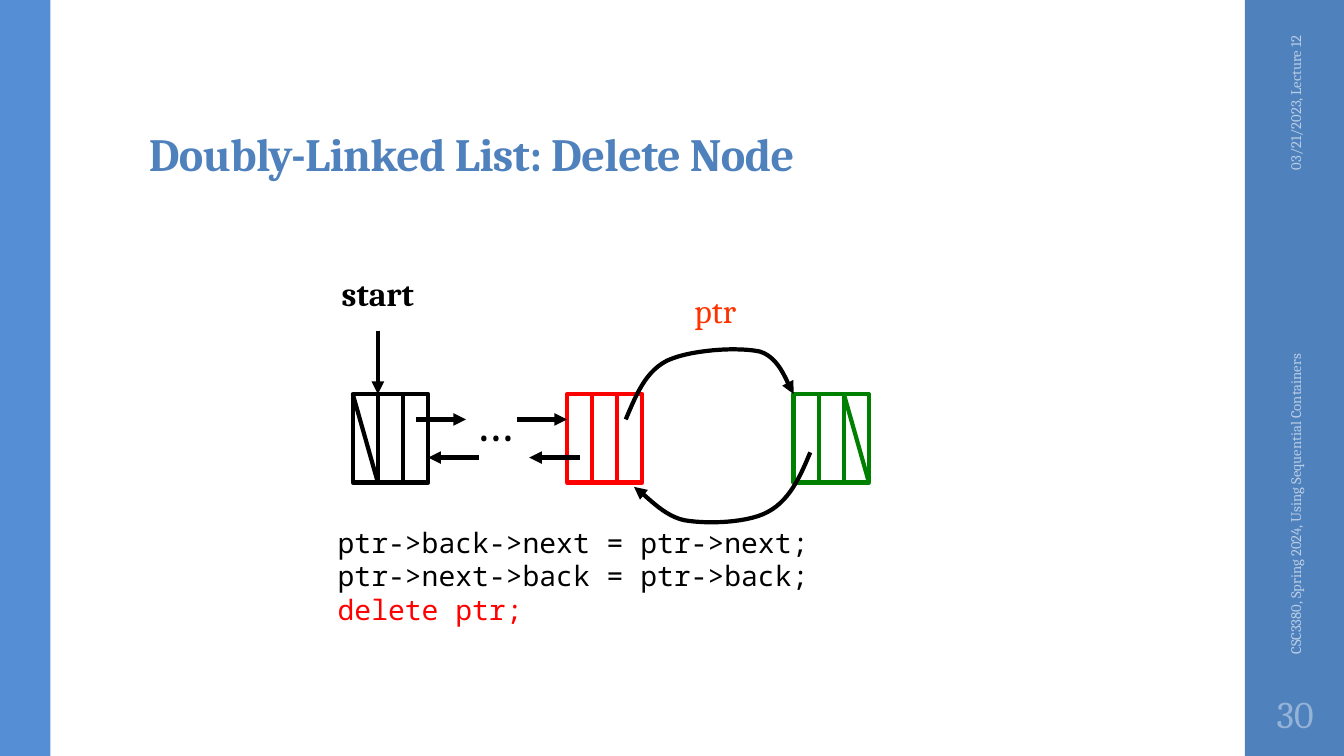
from lxml.etree import SubElement
from pptx import Presentation
from pptx.dml.color import RGBColor
from pptx.enum.shapes import MSO_CONNECTOR as Link, MSO_SHAPE as Shape
from pptx.enum.text import MSO_ANCHOR as Anchor, PP_ALIGN as Align
from pptx.oxml.ns import qn
from pptx.util import Cm, Pt

BLUE = RGBColor(0x4F, 0x81, 0xBD)
LIGHT_BLUE = RGBColor(0x55, 0x8E, 0xD5)
FOOTER_BLUE = RGBColor(0xB9, 0xCD, 0xE5)
NUMBER_BLUE = RGBColor(0x95, 0xB3, 0xD7)
BLACK = RGBColor(0, 0, 0)
WHITE = RGBColor(0xFF, 0xFF, 0xFF)
RED = RGBColor(0xFF, 0, 0)
ORANGE = RGBColor(0xFF, 0x33, 0)
GREEN = RGBColor(0, 0x80, 0)

SERIF, MONO = "Cambria", "Noto Sans Mono"
NODE_WIDTH, NODE_HEIGHT = 1.9, 2.23
CELL = NODE_WIDTH / 3
ARROW_LENGTH = 1.27
NEXT_Y, BACK_Y = 0.64, 1.6
CURVE_STEPS = 14

NEXT_CURVE = [(6.88, 0.64), (7.14, 0.03), (7.37, -0.56), (7.92, -0.84), (8.51, -1.12),
              (9.73, -1.19), (10.26, -1.07), (10.8, -0.91), (10.97, -0.18), (11.11, 0)]
BACK_CURVE = [(11.53, 1.47), (11.28, 2.08), (11, 2.69), (10.46, 2.97), (9.96, 3.25),
              (8.92, 3.28), (8.36, 3.18), (7.8, 3.07), (7.32, 2.47), (7.09, 2.34)]


def apply_format(target, values):
    """Set each named attribute of the target."""
    for name, value in values.items():
        setattr(target, name, value)


def add_label(slide, box, lines, size, font=SERIF, bold=False, align=Align.LEFT,
              rotation=0, spacing=None, line_spacing=None, **frame_format):
    """Write (text, colour) lines in a text box."""
    label = slide.shapes.add_textbox(*map(Cm, box))
    label.rotation = rotation
    frame = label.text_frame
    apply_format(frame, {"word_wrap": True, **frame_format})
    for index, (text, color) in enumerate(lines):
        paragraph = frame.add_paragraph() if index else frame.paragraphs[0]
        apply_format(paragraph, {"alignment": align, "line_spacing": line_spacing})
        run = paragraph.add_run()
        run.text = text
        apply_format(run.font, {"name": font, "size": Pt(size), "bold": bold})
        run.font.color.rgb = color
        if spacing:
            run._r.get_or_add_rPr().set("spc", str(spacing))


def add_block(slide, box, fill=None, outline=None):
    """Draw a rectangle with an optional fill and outline."""
    block = slide.shapes.add_shape(Shape.RECTANGLE, *map(Cm, box))
    block.shadow.inherit = False
    if fill is None:
        block.fill.background()
    else:
        block.fill.solid()
        block.fill.fore_color.rgb = fill
    if outline is None:
        block.line.fill.background()
    else:
        style_line(block, outline)


def style_line(part, color, arrow=False):
    """Give a line its colour, width and optional arrowhead."""
    part.line.color.rgb = color
    part.line.width = Pt(3)
    if arrow:
        SubElement(part.line._get_or_add_ln(), qn("a:tailEnd"), type="triangle")


def add_line(slide, start, end, color=BLACK, arrow=False):
    """Draw a straight line between two points."""
    link = slide.shapes.add_connector(Link.STRAIGHT, *map(Cm, (*start, *end)))
    style_line(link, color, arrow)
    SubElement(link._element.spPr, qn("a:effectLst"))


def curve_points(knots):
    """Return points along a chain of cubic curves."""
    points = [knots[0]]
    for first in range(0, len(knots) - 1, 3):
        a, b, c, d = knots[first:first + 4]
        for step in range(1, CURVE_STEPS + 1):
            t = step / CURVE_STEPS
            u = 1 - t
            weights = (u ** 3, 3 * u * u * t, 3 * u * t * t, t ** 3)
            points.append(tuple(sum(w * k for w, k in zip(weights, axis))
                                for axis in zip(a, b, c, d)))
    return points


def add_curved_arrow(slide, left, top, knots):
    """Draw a curved arrow through knots given from the left top point."""
    points = [(Cm(left + x), Cm(top + y)) for x, y in curve_points(knots)]
    builder = slide.shapes.build_freeform(*points[0])
    builder.add_line_segments(points[1:], close=False)
    curve = builder.convert_to_shape()
    curve.shadow.inherit = False
    curve.fill.background()
    style_line(curve, BLACK, arrow=True)


def add_node(slide, left, top, color, fill=None, null_cell=None):
    """Draw a three-cell list node, with a slash in its null cell."""
    bottom = top + NODE_HEIGHT
    add_block(slide, (left, top, NODE_WIDTH, NODE_HEIGHT), fill, color)
    for x in (left + CELL, left + 2 * CELL):
        add_line(slide, (x, top), (x, bottom), color)
    if null_cell is not None:
        x = left + null_cell * CELL
        add_line(slide, (x, top), (x + CELL, bottom), color)


def add_list_diagram(slide, left, top):
    """Draw the linked list, with its first node at the left top point."""
    deleted_left, last_left = left + 5.4, left + 11.11
    add_node(slide, left, top, BLACK, WHITE, null_cell=0)
    add_node(slide, deleted_left, top, RED)
    add_node(slide, last_left, top, GREEN, WHITE, null_cell=2)

    add_line(slide, (left + CELL, top - 1.6), (left + CELL, top), arrow=True)
    for x in (left + 2.5 * CELL, deleted_left - ARROW_LENGTH):
        add_line(slide, (x, top + NEXT_Y), (x + ARROW_LENGTH, top + NEXT_Y), arrow=True)
    for x in (left + NODE_WIDTH + ARROW_LENGTH, deleted_left + CELL / 2):
        add_line(slide, (x, top + BACK_Y), (x - ARROW_LENGTH, top + BACK_Y), arrow=True)
    for knots in (NEXT_CURVE, BACK_CURVE):
        add_curved_arrow(slide, left, top, knots)

    add_label(slide, (left - 0.53, top - 3.17, 4.34, 1.9), [("start", BLACK)], 24, bold=True)
    add_label(slide, (left + 2.84, top - 0.2, 1.58, 1.27), [("…", BLACK)], 36)
    add_label(slide, (left + 8.36, top - 2.74, 3.81, 1.27), [("ptr", ORANGE)], 24)


def add_sidebar(slide, left, top, width, height):
    """Draw the right band with the date, footer and slide number."""
    add_block(slide, (left, top, width, height), BLUE)
    add_label(slide, (left - 1.37, top + 2.77, 5.28, 1.02),
              [("03/21/2023, Lecture 12", FOOTER_BLUE)], 10.5, align=Align.RIGHT,
              rotation=270, vertical_anchor=Anchor.MIDDLE)
    add_label(slide, (left - 3.71, top + 11.25, 9.96, 1.02),
              [("CSC3380, Spring 2024, Using Sequential Containers", FOOTER_BLUE)], 10.5,
              rotation=270, vertical_anchor=Anchor.MIDDLE)
    add_label(slide, (left, top + 17.15, width, 1.65), [("30", NUMBER_BLUE)], 27,
              align=Align.CENTER, vertical_anchor=Anchor.MIDDLE,
              margin_left=Cm(0.13), margin_right=Cm(0.13))


def add_title(slide, box):
    """Write the slide title at the bottom of its box."""
    add_label(slide, box, [("Doubly-Linked List: Delete Node", BLUE)], 33, bold=True,
              spacing=-40, line_spacing=0.9, vertical_anchor=Anchor.BOTTOM,
              margin_top=Cm(0.08))


def add_code(slide, box):
    """Write the statements that remove the node."""
    add_label(slide, box, [("ptr->back->next = ptr->next;", BLACK),
                           ("ptr->next->back = ptr->back;", BLACK),
                           ("delete ptr;", RED)], 20, MONO)


def main():
    """Build and save the slide."""
    deck = Presentation()
    apply_format(deck, {"slide_width": Cm(33.87), "slide_height": Cm(19.05)})
    slide = deck.slides.add_slide(deck.slide_layouts[6])
    add_sidebar(slide, 31.37, 0, 2.54, 19.05)
    add_block(slide, (0, 0, 1.27, 19.05), LIGHT_BLUE)
    add_title(slide, (3.5, 0.81, 26.92, 3.89))
    add_list_diagram(slide, 8.89, 9.93)
    add_code(slide, (8.26, 13.11, 12.7, 2.82))
    deck.save("out.pptx")


if __name__ == "__main__":
    main()
